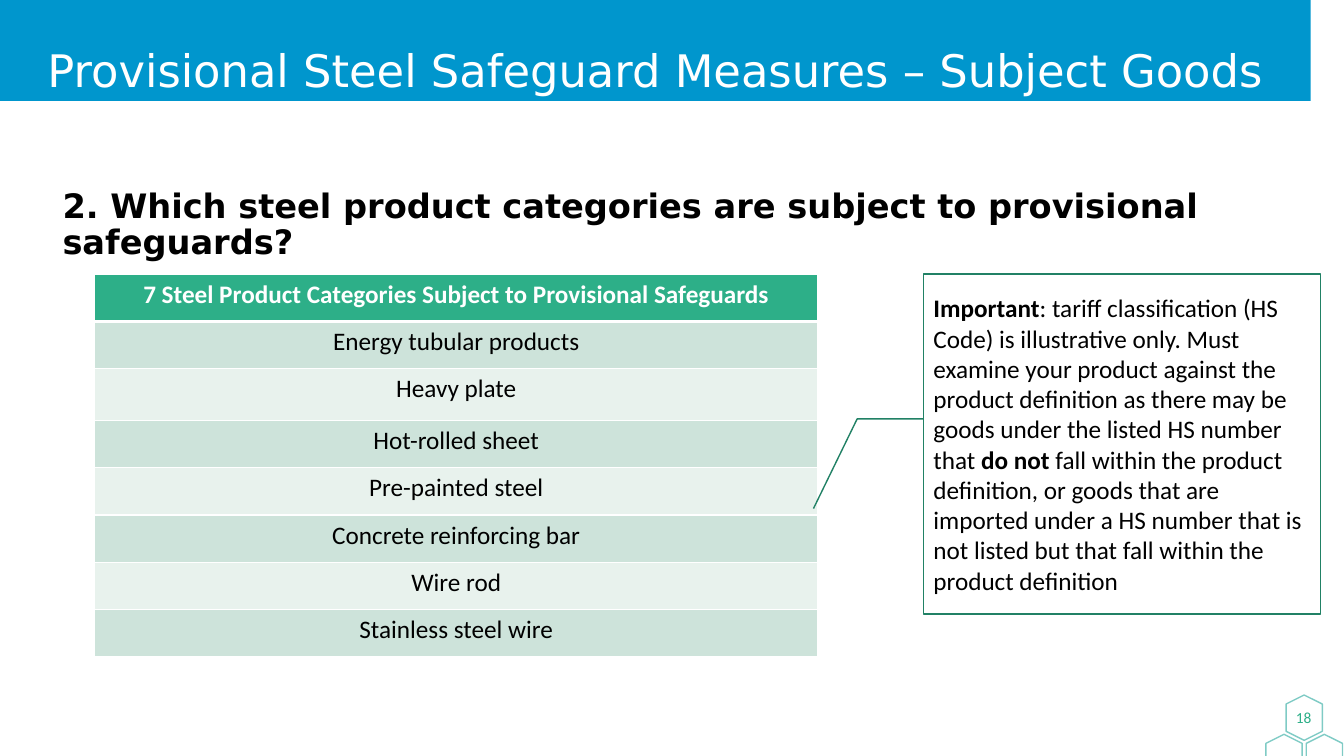
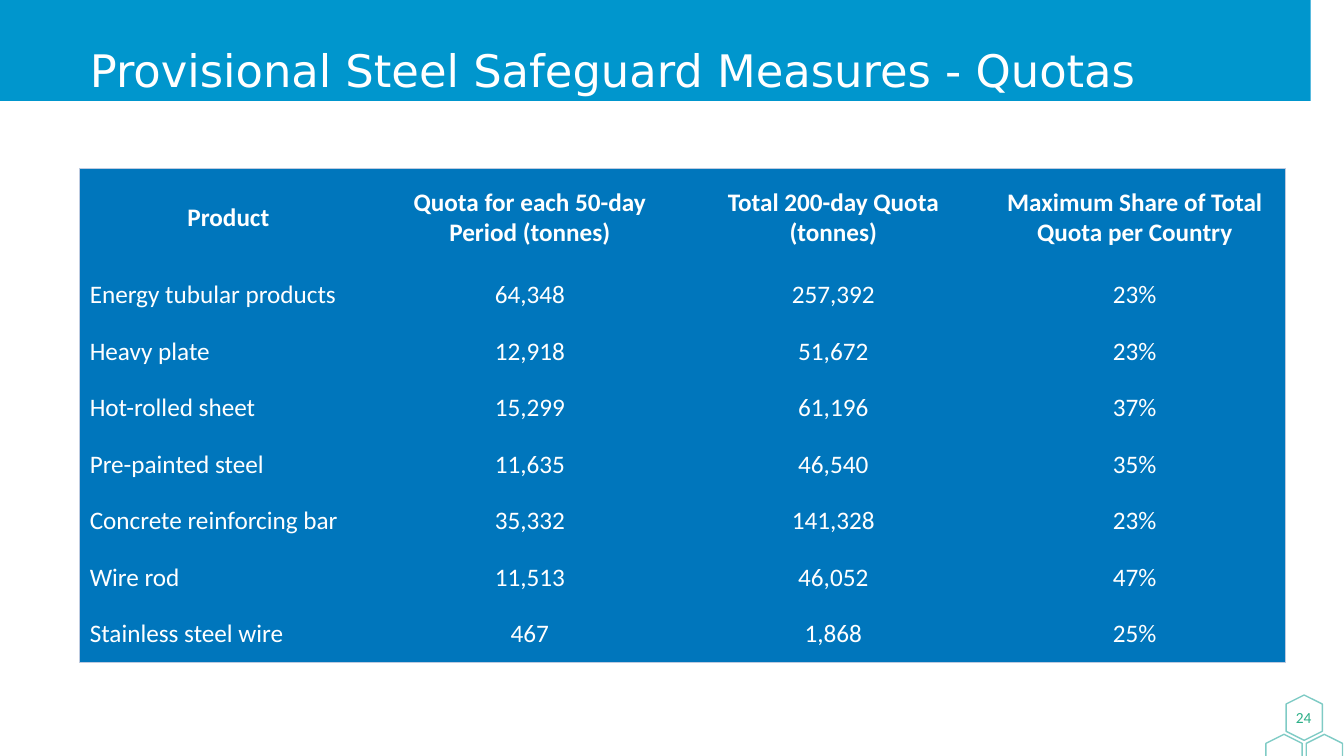
"""Build two slides on provisional steel safeguard measures."""
from lxml import etree
from pptx import Presentation
from pptx.dml.color import RGBColor
from pptx.enum.shapes import MSO_SHAPE
from pptx.enum.text import MSO_ANCHOR, MSO_AUTO_SIZE, PP_ALIGN
from pptx.oxml import parse_xml
from pptx.oxml.ns import qn
from pptx.util import Inches, Pt

NS = 'xmlns:a="http://schemas.openxmlformats.org/drawingml/2006/main"'
NO_GRID_STYLE = "{2D5ABB26-0587-4C30-8999-92F81FD0307C}"
BAND, TEAL, GREEN, DARK_GREEN = "0096CD", "00998D", "2DAF88", "218165"
BLUE, PALE_BLUE, WHITE, BLACK = "0076BC", "BDCAE0", "FFFFFF", "000000"
HEADING_FONT, BODY_FONT = "DejaVu Sans", "Calibri"


def rgb(value):
    return RGBColor.from_string(value)


def style(p, name, size, color, bold=False, align=PP_ALIGN.LEFT):
    p.alignment = align
    for r in p.runs:
        r.font.name, r.font.size, r.font.bold = name, Pt(size), bold
        r.font.color.rgb = rgb(color)


prs = Presentation()
prs.slide_width, prs.slide_height = Inches(13.33), Inches(7.5)
goods = prs.slides.add_slide(prs.slide_layouts[1])
quotas = prs.slides.add_slide(prs.slide_layouts[5])

# Shared band and hexagons, moved to the slide master
outline = goods.shapes.build_freeform(0, 0, scale=Inches(1))
outline.add_line_segments([(13.33, 0), (13.33, 1.14), (13.03, 1.32), (0, 1.32)])
band = outline.convert_to_shape()
band.fill.solid()
band.fill.fore_color.rgb = rgb(BAND)
band.line.fill.background()
decor = [band]
for x, y in [(12.71, 6.94), (12.91, 7.33), (12.51, 7.33)]:
    sp = goods.shapes.add_shape(MSO_SHAPE.HEXAGON, Inches(x), Inches(y), Inches(0.45), Inches(0.36))
    sp.rotation = 90
    sp.fill.background()
    sp.line.color.rgb = rgb(TEAL)
    sp.line.width = Pt(1)
    color = sp.line._ln.find(".//" + qn("a:srgbClr"))
    etree.SubElement(color, qn("a:alpha"), val="50000")
    decor.append(sp)
for i, sp in enumerate(decor):
    sp.shadow.inherit = False
    sp._element.nvSpPr.cNvPr.set("id", str(100 + i))
    prs.slide_master.shapes._spTree.append(sp._element)

for s, title, left, width, number in [
    (goods, "Provisional Steel Safeguard Measures – Subject Goods", 0.37, 12.44, "18"),
    (quotas, "Provisional Steel Safeguard Measures - Quotas", 0.79, 11.76, "24"),
]:
    sp = s.shapes.title
    sp.left, sp.top, sp.width, sp.height = Inches(left), Inches(0.19), Inches(width), Inches(1.07)
    tf = sp.text_frame
    tf.text = title
    tf.auto_size = MSO_AUTO_SIZE.NONE
    tf.vertical_anchor = MSO_ANCHOR.MIDDLE
    tf.paragraphs[0].line_spacing = 0.9
    style(tf.paragraphs[0], HEADING_FONT, 32, WHITE)

    sp = s.shapes.add_textbox(Inches(12.73), Inches(6.95), Inches(0.4), Inches(0.33))
    tf = sp.text_frame
    tf.text = number
    tf.word_wrap = True
    tf.margin_left = tf.margin_right = 0
    tf.vertical_anchor = MSO_ANCHOR.MIDDLE
    style(tf.paragraphs[0], BODY_FONT, 11, GREEN, align=PP_ALIGN.CENTER)

# Question on the first slide
sp = goods.placeholders[1]
sp.left, sp.top, sp.width, sp.height = Inches(0.52), Inches(1.83), Inches(12.29), Inches(0.85)
tf = sp.text_frame
tf.text = "2. Which steel product categories are subject to provisional safeguards?"
tf.auto_size = MSO_AUTO_SIZE.NONE
p = tf.paragraphs[0]
pPr = p._p.get_or_add_pPr()
pPr.set("marL", "0")
pPr.set("indent", "0")
etree.SubElement(pPr, qn("a:buNone"))
p.line_spacing, p.space_before = 0.9, Pt(0)
style(p, HEADING_FONT, 24, BLACK, bold=True)

quota_rows = [
    ("Product", "Quota for each 50-day Period (tonnes)", "Total 200-day Quota (tonnes)",
     "Maximum Share of Total Quota per Country"),
    ("Energy tubular products", "64,348", "257,392", "23%"),
    ("Heavy plate", "12,918", "51,672", "23%"),
    ("Hot-rolled sheet", "15,299", "61,196", "37%"),
    ("Pre-painted steel", "11,635", "46,540", "35%"),
    ("Concrete reinforcing bar", "35,332", "141,328", "23%"),
    ("Wire rod", "11,513", "46,052", "47%"),
    ("Stainless steel wire", "467", "1,868", "25%"),
]
category_rows = [("7 Steel Product Categories Subject to Provisional Safeguards",)]
category_rows += [row[:1] for row in quota_rows[1:]]

for s, rows, left, top, widths, heights, fills, ink, anchor, edge_color, edge_width, inner in [
    (goods, category_rows, 0.94, 2.72, [7.17], [0.47, 0.47, 0.51] + [0.47] * 5,
     [GREEN, "CDE3DA", "E8F2ED"], BLACK, MSO_ANCHOR.TOP, WHITE, 1, True),
    (quotas, quota_rows, 0.79, 1.67, [2.95, 3.03, 2.99, 2.99], [0.98] + [0.56] * 7,
     [BLUE] * 3, WHITE, MSO_ANCHOR.MIDDLE, PALE_BLUE, 0.5, False),
]:
    frame = s.shapes.add_table(len(rows), len(widths), Inches(left), Inches(top),
                               Inches(sum(widths)), Inches(sum(heights)))
    table = frame.table
    table._tbl.tblPr.find(qn("a:tableStyleId")).text = NO_GRID_STYLE
    for column, width in zip(table.columns, widths):
        column.width = Inches(width)
    for i, row in enumerate(rows):
        table.rows[i].height = Inches(heights[i])
        for j, value in enumerate(row):
            cell = table.cell(i, j)
            outer = {"L": j == 0, "R": j == len(row) - 1, "T": i == 0, "B": i == len(rows) - 1}
            for side, at_edge in outer.items():
                if at_edge or inner:
                    under_header = inner and (i, side) in [(0, "B"), (1, "T")]
                    w = Pt(3 if under_header else edge_width)
                    cell._tc.get_or_add_tcPr().append(parse_xml(
                        f'<a:ln{side} {NS} w="{w}"><a:solidFill><a:srgbClr val="{edge_color}"/>'
                        f'</a:solidFill></a:ln{side}>'))
            cell.fill.solid()
            cell.fill.fore_color.rgb = rgb(fills[0 if i == 0 else 2 - i % 2])
            cell.vertical_anchor = anchor
            cell.text_frame.text = value
            name_cell = i > 0 and j == 0 and len(row) > 1
            style(cell.text_frame.paragraphs[0], BODY_FONT, 18, ink if i else WHITE, bold=i == 0,
                  align=PP_ALIGN.LEFT if name_cell else PP_ALIGN.CENTER)

# Callout pointing at the category table
sp = goods.shapes.add_shape(MSO_SHAPE.LINE_CALLOUT_2, Inches(9.16), Inches(2.72), Inches(3.94), Inches(3.37))
for i, value in enumerate([0.426, 0, 0.426, -0.167, 0.69, -0.277]):
    sp.adjustments[i] = value
sp.shadow.inherit = False
sp.fill.solid()
sp.fill.fore_color.rgb = rgb(WHITE)
sp.line.color.rgb = rgb(DARK_GREEN)
sp.line.width = Pt(1)
tf = sp.text_frame
tf.word_wrap = True
tf.vertical_anchor = MSO_ANCHOR.MIDDLE
p = tf.paragraphs[0]
for text in [
    "Important",
    ": tariff classification (HS Code) is illustrative only. Must examine your product against the "
    "product definition as there may be goods under the listed HS number that ",
    "do not ",
    "fall within the product definition, or goods that are imported under a HS number that is not "
    "listed but that fall within the product definition",
]:
    p.add_run().text = text
style(p, BODY_FONT, 18, BLACK)
for r in p.runs[::2]:
    r.font.bold = True

prs.save("out.pptx")
